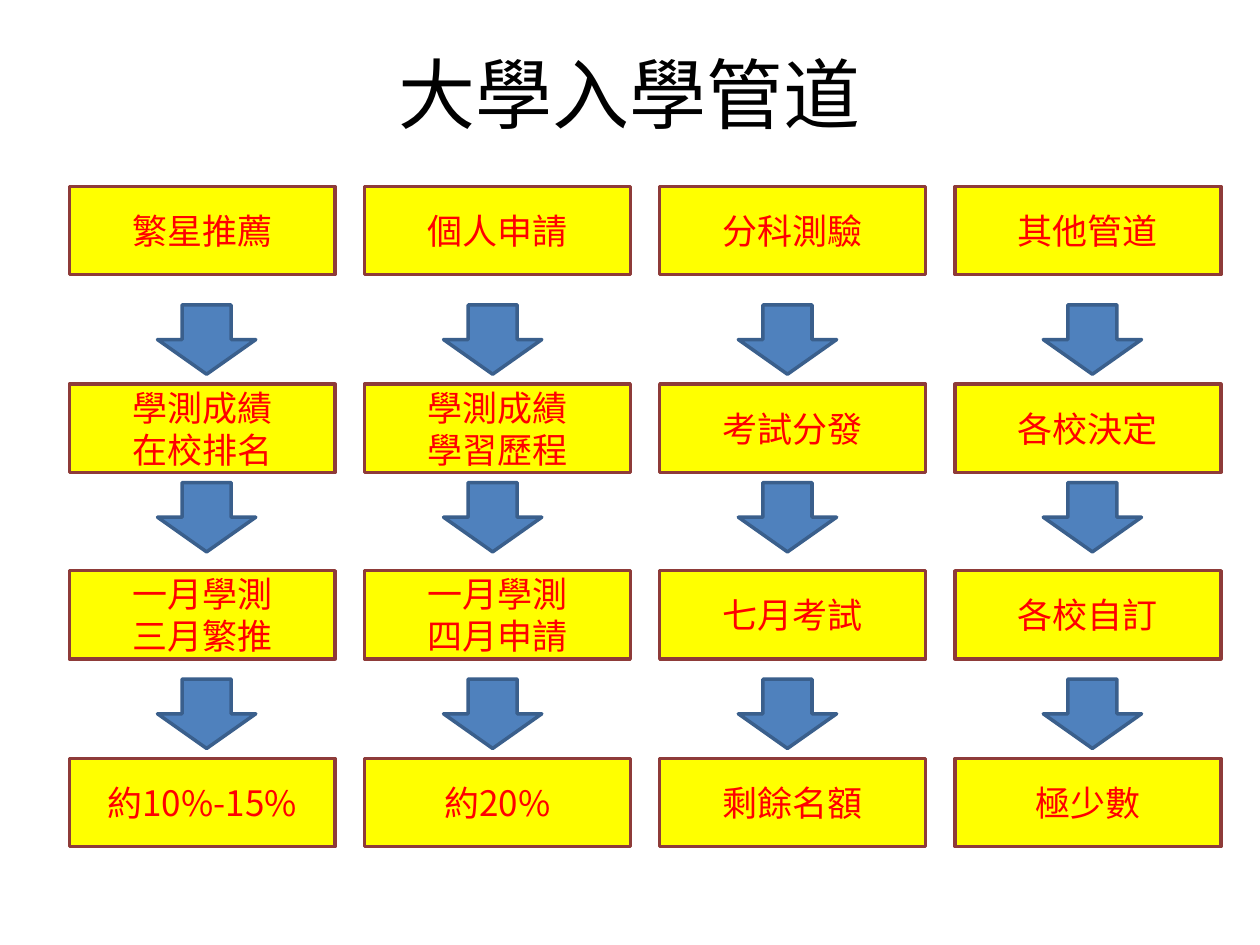
from lxml import etree
from pptx import Presentation
from pptx.dml.color import RGBColor
from pptx.enum.shapes import MSO_SHAPE
from pptx.enum.text import MSO_ANCHOR, PP_ALIGN
from pptx.oxml.ns import qn
from pptx.util import Inches, Pt

RECTANGLE, DOWN_ARROW = MSO_SHAPE.RECTANGLE, MSO_SHAPE.DOWN_ARROW
MIDDLE, CENTER = MSO_ANCHOR.MIDDLE, PP_ALIGN.CENTER

BLACK = RGBColor(0x00, 0x00, 0x00)
RED = RGBColor(0xFF, 0x00, 0x00)
YELLOW = RGBColor(0xFF, 0xFF, 0x00)
MAROON = RGBColor(0x8E, 0x3B, 0x39)
BLUE = RGBColor(0x4F, 0x81, 0xBD)
DARK_BLUE = RGBColor(0x3A, 0x5F, 0x8C)
FONT = "Noto Sans CJK SC"

# Content: one column per admission channel, from name to share of places
TITLE = "大學入學管道"
CHANNELS = [
    ["繁星推薦", "學測成績\n在校排名", "一月學測\n三月繁推", "約10%-15%"],
    ["個人申請", "學測成績\n學習歷程", "一月學測\n四月申請", "約20%"],
    ["分科測驗", "考試分發", "七月考試", "剩餘名額"],
    ["其他管道", "各校決定", "各校自訂", "極少數"],
]

# Layout in inches
BOX_LEFT, BOX_PITCH, BOX_W, BOX_H = 0.55, 2.343, 2.11, 0.7
BOX_TOPS = [1.48, 3.05, 4.53, 6.02]
ARROW_LEFTS = [1.25, 3.52, 5.86, 8.28]
ARROW_TOPS = [2.42, 3.83, 5.39]
ARROW_W, ARROW_H = 0.78, 0.55

TITLE_FORMAT = {"name": FONT, "size": Pt(44)}
BOX_FORMAT = {"name": FONT, "size": Pt(20)}


def write_text(shape, text, font_format, color):
    frame = shape.text_frame
    frame.word_wrap = True
    frame.vertical_anchor = MIDDLE
    frame.text = text
    for paragraph in frame.paragraphs:
        paragraph.alignment = CENTER
        for run in paragraph.runs:
            for attribute, value in font_format.items():
                setattr(run.font, attribute, value)
            run.font.color.rgb = color
            # East Asian typeface, for the Chinese characters
            east_asian = etree.SubElement(run.font._element, qn("a:ea"))
            east_asian.set("typeface", FONT)


def add_block(slide, kind, left, top, width, height, fill, line):
    block = slide.shapes.add_shape(
        kind, Inches(left), Inches(top), Inches(width), Inches(height))
    block.shadow.inherit = False
    block.fill.solid()
    block.fill.fore_color.rgb = fill
    block.line.color.rgb = line
    block.line.width = Pt(2)
    return block


def main():
    deck = Presentation()
    deck.slide_width, deck.slide_height = Inches(10), Inches(7.5)
    slide = deck.slides.add_slide(deck.slide_layouts[6])

    # Title
    heading = slide.shapes.add_textbox(
        Inches(0.5), Inches(0.3), Inches(9), Inches(0.87))
    write_text(heading, TITLE, TITLE_FORMAT, BLACK)

    # Steps of each channel
    for column, steps in enumerate(CHANNELS):
        left = BOX_LEFT + column * BOX_PITCH
        for step, top in zip(steps, BOX_TOPS):
            box = add_block(slide, RECTANGLE, left, top, BOX_W, BOX_H,
                            YELLOW, MAROON)
            write_text(box, step, BOX_FORMAT, RED)

    # Arrows between the steps
    for top in ARROW_TOPS:
        for left in ARROW_LEFTS:
            add_block(slide, DOWN_ARROW, left, top, ARROW_W, ARROW_H,
                      BLUE, DARK_BLUE)

    deck.save("out.pptx")


if __name__ == "__main__":
    main()
